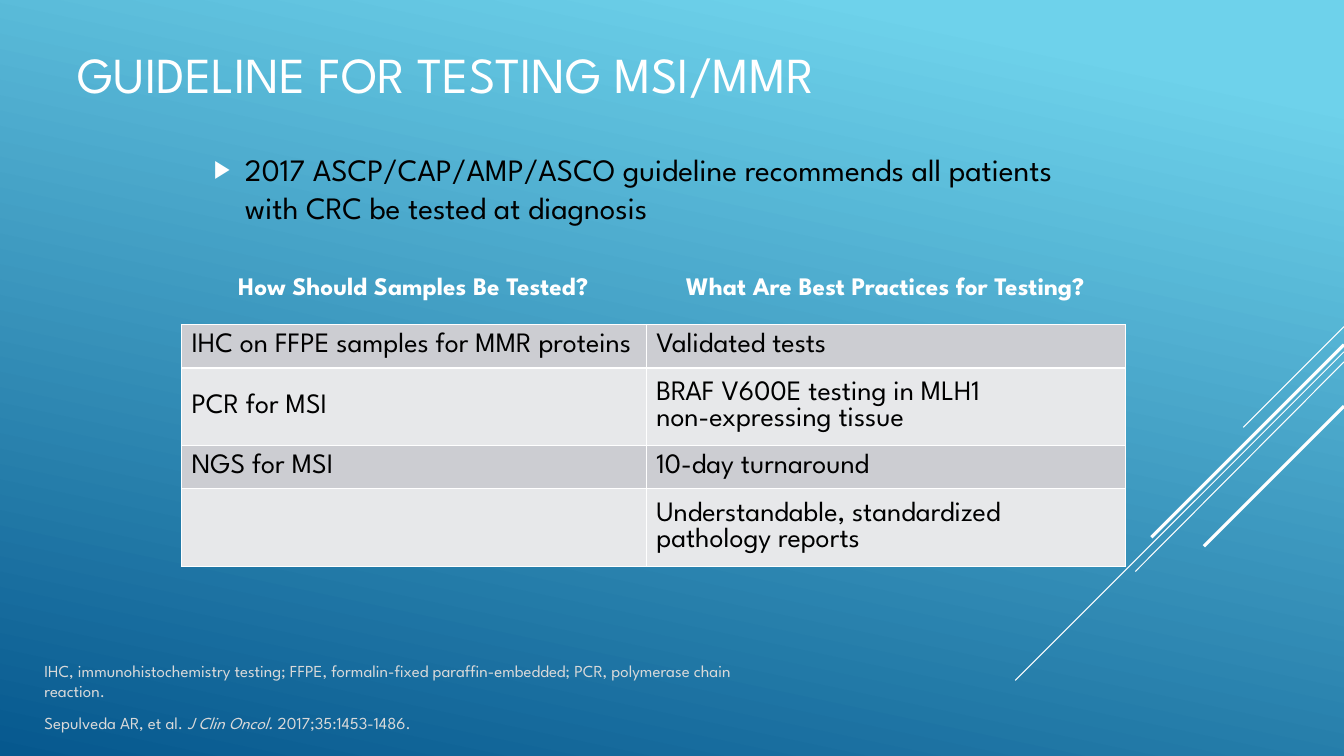
from lxml import etree
from pptx import Presentation
from pptx.dml.color import RGBColor
from pptx.enum.shapes import MSO_CONNECTOR
from pptx.enum.text import MSO_ANCHOR, MSO_AUTO_SIZE, PP_ALIGN
from pptx.oxml import parse_xml
from pptx.oxml.ns import nsdecls, qn
from pptx.util import Inches, Pt

LINE = MSO_CONNECTOR.STRAIGHT
MID, LOW, TOP = MSO_ANCHOR.MIDDLE, MSO_ANCHOR.BOTTOM, MSO_ANCHOR.TOP
LEFT, MIDST = PP_ALIGN.LEFT, PP_ALIGN.CENTER
FONT = "League Spartan"
WHITE, BLACK, GREY = "FFFFFF", "000000", "D9D9D9"
BANDS = ["CCCDD2", "E7E8EA"]
NS = nsdecls("a")


def color(code):
    return RGBColor.from_string(code)


def write(frame, paras, size, ink, bold=False, align=LEFT, anchor=None,
          bullet=None, after=0):
    """Fill a frame; each paragraph is a list of (text, italic) runs."""
    if anchor is not None:
        frame.word_wrap = True
        frame.auto_size = MSO_AUTO_SIZE.NONE
        frame.vertical_anchor = anchor
    for i, runs in enumerate(paras):
        para = frame.paragraphs[0] if i == 0 else frame.add_paragraph()
        props = para._p.get_or_add_pPr()
        indent = Inches(0.31) if bullet else 0
        props.set("marL", str(indent))
        props.set("indent", str(-indent))
        if bullet:
            marks = [f'<a:buClr {NS}><a:srgbClr val="{WHITE}"/></a:buClr>',
                     f'<a:buSzPct {NS} val="80000"/>',
                     f'<a:buChar {NS} char="{bullet}"/>']
        else:
            marks = [f"<a:buNone {NS}/>"]
        for mark in marks:
            props.append(parse_xml(mark))
        para.alignment = align
        para.space_before = Pt(size * 0.2 if i else 0)
        para.space_after = Pt(after)
        for text, slant in runs:
            for n, part in enumerate(text.split("\n")):
                if n:
                    para.add_line_break()
                run = para.add_run()
                run.text = part
                font = run.font
                font.name, font.size = FONT, Pt(size)
                font.bold, font.italic = bold, slant
                font.color.rgb = color(ink)


deck = Presentation()
deck.slide_width, deck.slide_height = Inches(13.33), Inches(7.5)
slide = deck.slides.add_slide(deck.slide_layouts[3])
shapes = slide.shapes

# Background
back = slide.background.fill
back.gradient()
back.gradient_angle = 258
for stop, (spot, code) in zip(back.gradient_stops,
                              [(0.1, "6ED2EB"), (1, "06588E")]):
    stop.position = spot
    stop.color.rgb = color(code)

# Diagonal lines from the right edge: start y, end x, end y, width
for y, x2, y2, width in [(3.24, 12.33, 4.24, 0.75), (3.49, 10.07, 6.75, 0.75),
                         (3.59, 11.26, 5.67, 0.75), (3.42, 11.42, 5.33, 2.25),
                         (4.03, 11.94, 5.42, 2.25)]:
    ray = shapes.add_connector(LINE, Inches(13.33), Inches(y),
                               Inches(x2), Inches(y2))
    ray.line.color.rgb = color(WHITE)
    ray.line.width = Pt(width)
    etree.SubElement(ray._element.spPr, qn("a:effectLst"))

# Title, bullet and footnotes
title, body, notes = slide.placeholders
for holder, box in [(title, (0.67, 0, 12, 1.46)),
                    (body, (2.02, 1.36, 8.92, 1.01)),
                    (notes, (0.34, 6.76, 7.65, 0.56))]:
    holder.left, holder.top, holder.width, holder.height = map(Inches, box)
write(title.text_frame, [[("GUIDELINE FOR TESTING MSI/MMR", False)]],
      36, WHITE, anchor=MID)
write(body.text_frame,
      [[("2017 ASCP/CAP/AMP/ASCO guideline recommends all patients "
         "with CRC be tested at diagnosis", False)]],
      22.2, BLACK, anchor=MID, bullet="▶", after=6)
write(notes.text_frame,
      [[("IHC, immunohistochemistry testing; FFPE, formalin-fixed "
         "paraffin-embedded; PCR, polymerase chain reaction.", False)],
       [("Sepulveda AR, et al. ", False), ("J Clin Oncol. ", True),
        ("2017;35:1453-1486.", False)]],
      12, GREY, anchor=LOW, after=6)

# Column headings
for x, width, text in [(1.8, 4.6, "How Should Samples Be Tested?"),
                       (6.39, 4.78, "What Are Best Practices for Testing?")]:
    head = shapes.add_textbox(Inches(x), Inches(2.63), Inches(width), Inches(0.4))
    write(head.text_frame, [[(text, False)]], 18, WHITE,
          bold=True, align=MIDST, anchor=TOP)

# Table
rows = [("IHC on FFPE samples for MMR proteins", "Validated tests"),
        ("PCR for MSI", "BRAF V600E testing in MLH1\nnon-expressing tissue"),
        ("NGS for MSI", "10-day turnaround"),
        ("", "Understandable, standardized pathology reports")]
grid = shapes.add_table(4, 2, Inches(1.8), Inches(3.22),
                        Inches(9.37), Inches(2.4)).table
grid.first_row = grid.horz_banding = False
for col, width in zip(grid.columns, (4.61, 4.75)):
    col.width = Inches(width)
for r, texts in enumerate(rows):
    grid.rows[r].height = Inches((0.43, 0.77)[r % 2])
    for c, text in enumerate(texts):
        cell = grid.cell(r, c)
        cell.vertical_anchor = MID
        for side in ("lnL", "lnR", "lnT", "lnB"):
            cell._tc.get_or_add_tcPr().append(parse_xml(
                f'<a:{side} {NS} w="12700"><a:solidFill>'
                f'<a:srgbClr val="{WHITE}"/></a:solidFill></a:{side}>'))
        cell.fill.solid()
        cell.fill.fore_color.rgb = color(BANDS[r % 2])
        if text:
            write(cell.text_frame, [[(text, False)]], 20, BLACK)

deck.save("out.pptx")
